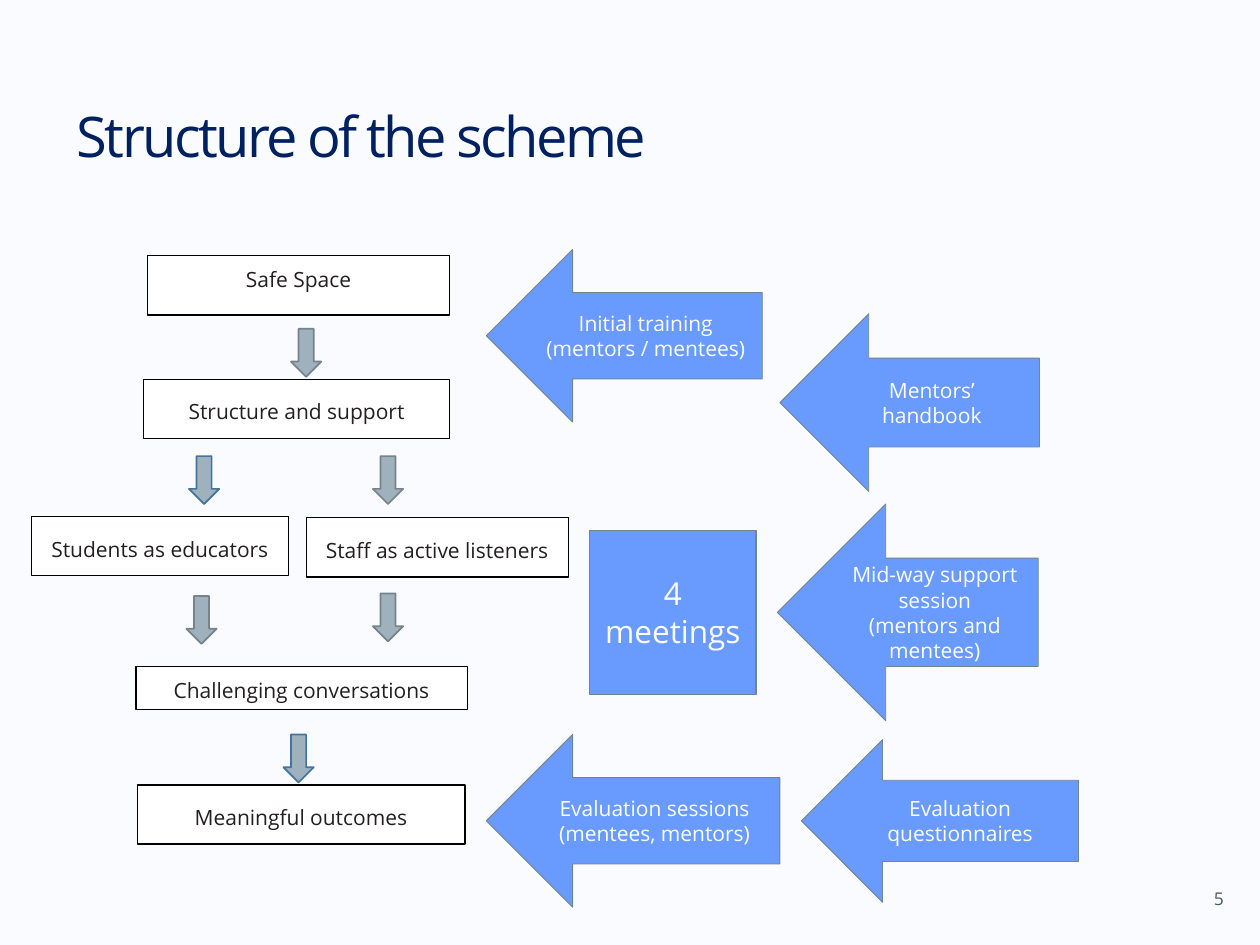
from pptx import Presentation
from pptx.dml.color import RGBColor
from pptx.enum.shapes import MSO_SHAPE
from pptx.enum.text import MSO_ANCHOR, PP_ALIGN
from pptx.util import Inches, Pt

RECT, DOWN = MSO_SHAPE.RECTANGLE, MSO_SHAPE.DOWN_ARROW
LEFT, PROCESS = MSO_SHAPE.LEFT_ARROW, MSO_SHAPE.FLOWCHART_PROCESS
TOP, MIDDLE, BOTTOM = MSO_ANCHOR.TOP, MSO_ANCHOR.MIDDLE, MSO_ANCHOR.BOTTOM
CENTER, RIGHT, ALIGN_LEFT = PP_ALIGN.CENTER, PP_ALIGN.RIGHT, PP_ALIGN.LEFT

FONT = "Open Sans"
PAPER = RGBColor(0xF9, 0xFB, 0xFF)
NAVY = RGBColor(0x00, 0x20, 0x60)
WHITE = RGBColor(0xFF, 0xFF, 0xFF)
BLACK = RGBColor(0x00, 0x00, 0x00)
INK = RGBColor(0x23, 0x1F, 0x20)
SLATE = RGBColor(0x49, 0x59, 0x61)
STEEL = RGBColor(0x9F, 0xB1, 0xBD)
GREY = RGBColor(0x76, 0x83, 0x8C)
BLUE_LINE = RGBColor(0x43, 0x73, 0x9E)
BLUE = RGBColor(0x69, 0x9B, 0xFF)

# Content: places are left, top, width, height in inches
TITLE = "Structure of the scheme"
PAGE_NUMBER = "5"
STAGES = [
    ("Safe Space", (1.17, 2.03, 2.4, 0.47), TOP),
    ("Structure and support", (1.14, 3.01, 2.43, 0.47), MIDDLE),
    ("Students as educators", (0.25, 4.1, 2.04, 0.47), MIDDLE),
    ("Staff as active listeners", (2.43, 4.11, 2.08, 0.47), MIDDLE),
    ("Challenging conversations", (1.08, 5.29, 2.63, 0.34), MIDDLE),
    ("Meaningful outcomes", (1.09, 6.23, 2.6, 0.47), MIDDLE),
]
STEP_SIZE = (0.24, 0.38)
STEPS = [
    (2.31, 2.61, GREY),
    (1.5, 3.62, BLUE_LINE),
    (2.96, 3.62, GREY),
    (1.48, 4.73, GREY),
    (2.96, 4.71, GREY),
    (2.25, 5.83, BLUE_LINE),
]
SUPPORTS = [
    (["Initial training", "(mentors / mentees)"], (3.86, 1.98, 2.19, 1.37)),
    (["Mid-way support session", "(mentors and mentees)"], (6.17, 4, 2.07, 1.72)),
    (["Mentors’ handbook"], (6.19, 2.49, 2.06, 1.41)),
    (["Evaluation sessions (mentees, mentors)"], (3.86, 5.83, 2.33, 1.37)),
    (["Evaluation questionnaires"], (6.36, 5.87, 2.2, 1.29)),
]
MEETINGS = (["4 meetings"], (4.68, 4.21, 1.32, 1.3))


def write(shape, lines, size, color, align=CENTER, anchor=MIDDLE):
    frame = shape.text_frame
    frame.word_wrap = True
    frame.vertical_anchor = anchor
    frame.text = "\n".join(lines)
    for para in frame.paragraphs:
        para.alignment = align
        para.font.name = FONT
        para.font.size = Pt(size)
        para.font.color.rgb = color
    return frame


def add_box(page, kind, place, fill, line, width):
    shape = page.shapes.add_shape(kind, *map(Inches, place))
    shape.shadow.inherit = False
    shape.fill.solid()
    shape.fill.fore_color.rgb = fill
    shape.line.color.rgb = line
    shape.line.width = Pt(width)
    return shape


def main():
    deck = Presentation()
    deck.slide_width, deck.slide_height = Inches(10), Inches(7.5)
    page = deck.slides.add_slide(deck.slide_layouts[5])
    page.background.fill.solid()
    page.background.fill.fore_color.rgb = PAPER

    # Title and page number
    title = page.shapes.title
    title.left, title.top = Inches(0.51), Inches(0.76)
    title.width, title.height = Inches(8.9), Inches(0.63)
    frame = write(title, [TITLE], 32, NAVY, ALIGN_LEFT, BOTTOM)
    span = frame.paragraphs[0].runs[0]
    span.font._element.set("spc", "-150")
    number = page.shapes.add_textbox(*map(Inches, (9.02, 7, 0.79, 0.27)))
    write(number, [PAGE_NUMBER], 10, SLATE, RIGHT, TOP)

    # Stages of the scheme
    for label, place, anchor in STAGES:
        box = add_box(page, RECT, place, WHITE, BLACK, 0.75)
        para = write(box, [label], 12, INK, anchor=anchor).paragraphs[0]
        para.line_spacing = 1.2
        para.space_after = Pt(4.5)

    # Steps between stages
    for left, top, line in STEPS:
        add_box(page, DOWN, (left, top, *STEP_SIZE), STEEL, line, 1)

    # Support given along the way
    for lines, place in SUPPORTS:
        write(add_box(page, LEFT, place, BLUE, GREY, 0.5), lines, 12, WHITE)
    lines, place = MEETINGS
    write(add_box(page, PROCESS, place, BLUE, GREY, 0.75), lines, 18, WHITE)

    deck.save("out.pptx")


if __name__ == "__main__":
    main()
